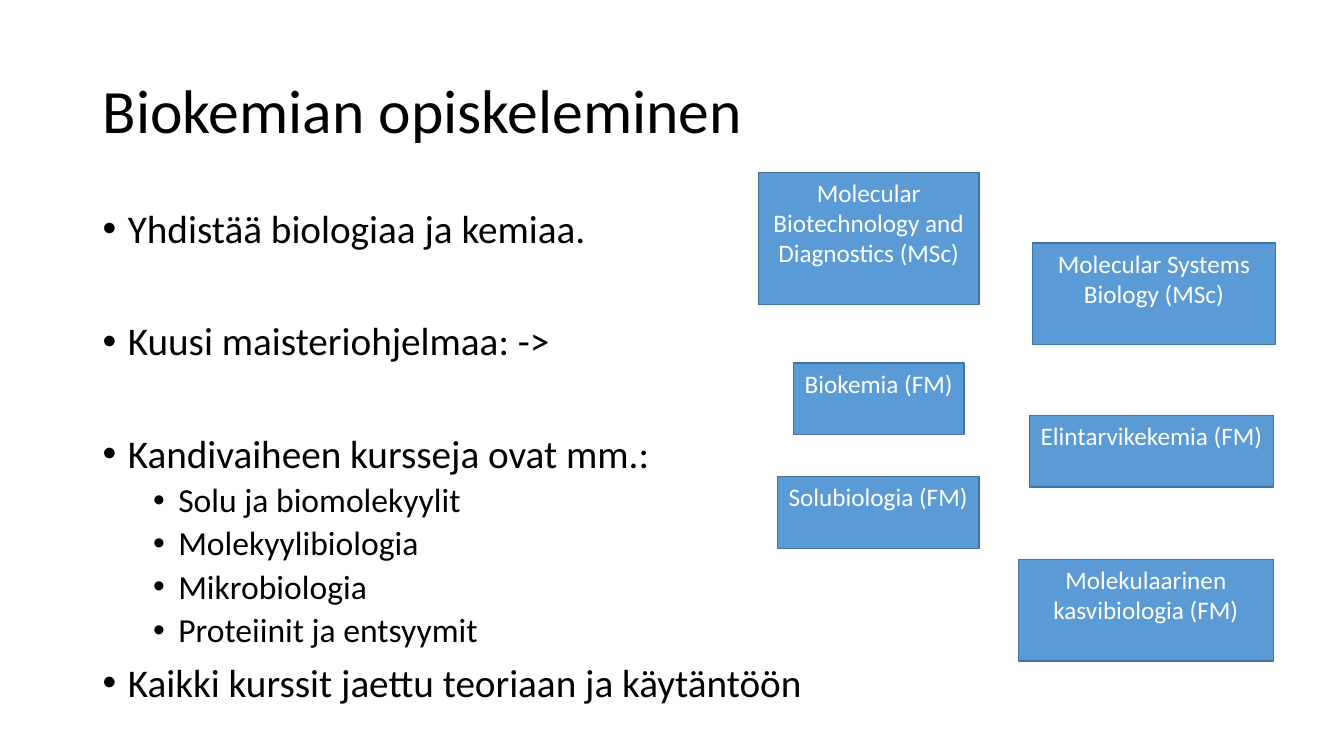
from lxml import etree
from pptx import Presentation
from pptx.dml.color import RGBColor
from pptx.enum import shapes, text
from pptx.oxml.ns import qn
from pptx.util import Inches, Pt

TITLE = "Biokemian opiskeleminen"
# text, level, space before in points
BULLETS = [
    ("Yhdistää biologiaa ja kemiaa.", 0, 0),
    ("Kuusi maisteriohjelmaa: ->", 0, 50),
    ("Kandivaiheen kursseja ovat mm.:", 0, 50),
    ("Solu ja biomolekyylit", 1, 5),
    ("Molekyylibiologia", 1, 5),
    ("Mikrobiologia", 1, 5),
    ("Proteiinit ja entsyymit", 1, 5),
    ("Kaikki kurssit jaettu teoriaan ja käytäntöön", 0, 10),
]
# text, left, top, width, height, wraps
PROGRAMMES = [
    ("Molecular Biotechnology and Diagnostics (MSc)", 7.52, 1.71, 2.19, 1.31, True),
    ("Molecular Systems Biology (MSc)", 10.24, 2.41, 2.41, 1.01, True),
    ("Biokemia (FM)", 7.87, 3.6, 1.69, 0.71, False),
    ("Elintarvikekemia (FM)", 10.21, 4.12, 2.42, 0.71, False),
    ("Solubiologia (FM)", 7.71, 4.73, 2, 0.71, False),
    ("Molekulaarinen kasvibiologia (FM)", 10.1, 5.55, 2.53, 1.01, True),
]
LEVEL_SIZES = (28, 24)
LEVEL_INDENTS = (0.25, 0.75)
FONT = "Calibri"
BLACK = RGBColor(0x00, 0x00, 0x00)
WHITE = RGBColor(0xFF, 0xFF, 0xFF)
BLUE = RGBColor(0x5B, 0x9B, 0xD5)
DARK_BLUE = RGBColor(0x43, 0x73, 0x9E)


def add_run(p, wording, size, color):
    r = p.add_run()
    r.text = wording
    r.font.name = FONT
    r.font.size = Pt(size)
    r.font.color.rgb = color


def add_bullet(p, level):
    p.level = level
    pPr = p._p.get_or_add_pPr()
    pPr.set("marL", str(Inches(LEVEL_INDENTS[level])))
    pPr.set("indent", str(Inches(-0.25)))
    etree.SubElement(pPr, qn("a:buFont")).set("typeface", "Arial")
    etree.SubElement(pPr, qn("a:buChar")).set("char", "•")


def add_title(s):
    title = s.shapes.title
    title.left, title.top = Inches(0.92), Inches(0.4)
    title.width, title.height = Inches(11.5), Inches(1.45)
    tf = title.text_frame
    tf.auto_size = text.MSO_AUTO_SIZE.NONE
    tf.vertical_anchor = text.MSO_ANCHOR.MIDDLE
    p = tf.paragraphs[0]
    p.alignment = text.PP_ALIGN.LEFT
    p.line_spacing = 0.9
    add_run(p, TITLE, 44, BLACK)


def add_body(s):
    tf = s.shapes.add_textbox(Inches(0.92), Inches(2.03), Inches(11.5), Inches(5.06)).text_frame
    tf.word_wrap = True
    for i, (wording, level, before) in enumerate(BULLETS):
        p = tf.add_paragraph() if i else tf.paragraphs[0]
        add_bullet(p, level)
        p.line_spacing = 0.9
        p.space_before = Pt(before)
        add_run(p, wording, LEVEL_SIZES[level], BLACK)


def add_programme(s, wording, left, top, width, height, wraps):
    sp = s.shapes.add_shape(shapes.MSO_SHAPE.RECTANGLE, Inches(left), Inches(top),
                            Inches(width), Inches(height))
    sp.shadow.inherit = False
    sp.fill.solid()
    sp.fill.fore_color.rgb = BLUE
    sp.line.color.rgb = DARK_BLUE
    sp.line.width = Pt(1)
    tf = sp.text_frame
    tf.word_wrap = wraps
    tf.vertical_anchor = text.MSO_ANCHOR.TOP
    p = tf.paragraphs[0]
    p.alignment = text.PP_ALIGN.CENTER
    add_run(p, wording, 18, WHITE)


def main():
    prs = Presentation()
    prs.slide_width, prs.slide_height = Inches(13.33), Inches(7.5)
    s = prs.slides.add_slide(prs.slide_layouts[5])
    add_title(s)
    add_body(s)
    for programme in PROGRAMMES:
        add_programme(s, *programme)
    prs.save("out.pptx")


if __name__ == "__main__":
    main()
